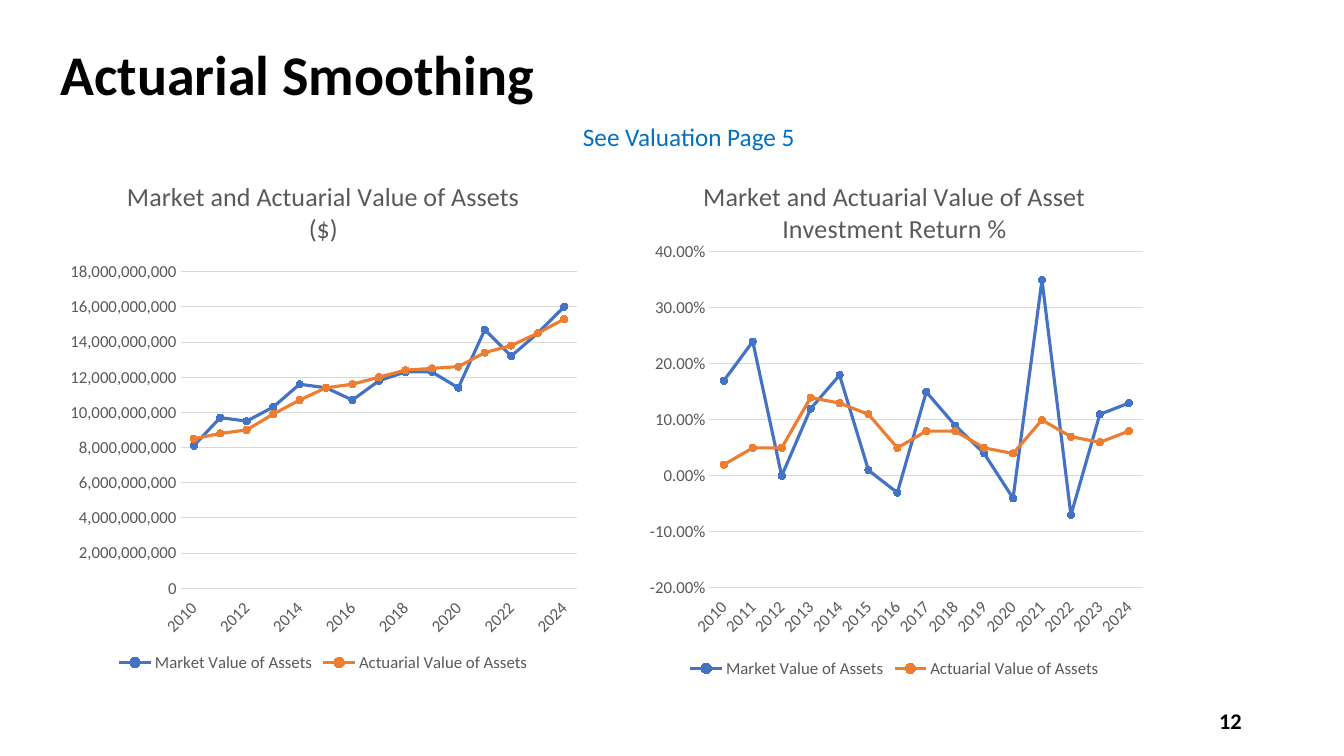
from lxml.etree import SubElement
from pptx import Presentation
from pptx.chart.data import CategoryChartData
from pptx.dml.color import RGBColor
from pptx.enum.chart import (XL_CHART_TYPE, XL_LEGEND_POSITION, XL_MARKER_STYLE,
                             XL_TICK_LABEL_POSITION, XL_TICK_MARK)
from pptx.enum.text import MSO_ANCHOR, PP_ALIGN
from pptx.oxml.ns import qn
from pptx.util import Inches, Pt

COLS, ROWS = 160, 90
WIDTH, HEIGHT = Inches(13.333), Inches(7.5)
FONT = "Calibri"
COLORS = {"black": "000000", "note": "0070C0", "label": "595959", "grid": "D9D9D9",
          "market": "4472C4", "actuarial": "ED7D31"}
YEARS = [str(year) for year in range(2010, 2025)]
BILLION = 10 ** 9
MARKET_VALUES = [8.1, 9.7, 9.5, 10.3, 11.6, 11.4, 10.7, 11.8, 12.3, 12.3, 11.4, 14.7, 13.2, 14.5, 16]
ACTUARIAL_VALUES = [8.5, 8.8, 9, 9.9, 10.7, 11.4, 11.6, 12, 12.4, 12.5, 12.6, 13.4, 13.8, 14.5, 15.3]
MARKET_RETURNS = [0.17, 0.24, 0, 0.12, 0.18, 0.01, -0.03, 0.15, 0.09, 0.04, -0.04, 0.35, -0.07, 0.11, 0.13]
ACTUARIAL_RETURNS = [0.02, 0.05, 0.05, 0.14, 0.13, 0.11, 0.05, 0.08, 0.08, 0.05, 0.04, 0.1, 0.07, 0.06, 0.08]


def rgb(name):
    """Return the named colour."""
    return RGBColor.from_string(COLORS[name])


def cells(col, row, cols, rows):
    """Turn grid units into left, top, width and height."""
    return (int(WIDTH * col / COLS), int(HEIGHT * row / ROWS),
            int(WIDTH * cols / COLS), int(HEIGHT * rows / ROWS))


def style_font(font, size, color, bold=False):
    """Set the typeface, size, colour and weight of a font."""
    font.name, font.size, font.bold = FONT, Pt(size), bold
    font.color.rgb = rgb(color)


def add_text(slide, box, text, size, color="black", bold=False,
             align=PP_ALIGN.LEFT, anchor=MSO_ANCHOR.MIDDLE, indent=0):
    """Add a one-line text box."""
    tf = slide.shapes.add_textbox(*cells(*box)).text_frame
    tf.word_wrap = True
    tf.vertical_anchor = anchor
    tf.margin_left += Inches(indent)
    p = tf.paragraphs[0]
    p.alignment = align
    r = p.add_run()
    r.text = text
    style_font(r.font, size, color, bold)


def set_plot_area(chart, x, y, w, h):
    """Fix the inner plot area as shares of the chart's size."""
    plot_area = chart.plots[0]._element.getparent()
    for old in plot_area.findall(qn("c:layout")):
        plot_area.remove(old)
    layout = SubElement(plot_area, qn("c:layout"))
    plot_area.insert(0, layout)
    manual = SubElement(layout, qn("c:manualLayout"))
    settings = {"layoutTarget": "inner", "xMode": "edge", "yMode": "edge",
                "x": x, "y": y, "w": w, "h": h}
    for tag, value in settings.items():
        SubElement(manual, qn(f"c:{tag}")).set("val", str(value))


def style_axes(chart, low, high, step, number_format):
    """Style the year axis and the scaled value axis."""
    years, values = chart.category_axis, chart.value_axis
    for axis in (years, values):
        axis.major_tick_mark = axis.minor_tick_mark = XL_TICK_MARK.NONE
        style_font(axis.tick_labels.font, 12, "label")
    years.tick_label_position = XL_TICK_LABEL_POSITION.LOW
    years.format.line.color.rgb = rgb("grid")
    years.format.line.width = Pt(0.75)
    years._element.find(qn("c:txPr")).find(qn("a:bodyPr")).set("rot", "-2700000")
    values.minimum_scale, values.maximum_scale, values.major_unit = low, high, step
    values.tick_labels.number_format = number_format
    values.tick_labels.number_format_is_linked = False
    values.format.line.fill.background()
    values.major_gridlines.format.line.color.rgb = rgb("grid")
    values.major_gridlines.format.line.width = Pt(0.75)


def add_line_chart(slide, box, title, market, actuarial, scale, number_format, plot):
    """Add a line chart comparing market and actuarial figures."""
    data = CategoryChartData(number_format=number_format)
    data.categories = YEARS
    data.add_series("Market Value of Assets", market)
    data.add_series("Actuarial Value of Assets", actuarial)
    chart = slide.shapes.add_chart(XL_CHART_TYPE.LINE_MARKERS, *cells(*box), data).chart
    style_font(chart.font, 10, "black")
    r = chart.chart_title.text_frame.paragraphs[0].add_run()
    r.text = title
    style_font(r.font, 18.6, "label")
    chart.chart_title.include_in_layout = False
    chart.has_legend = True
    chart.legend.position = XL_LEGEND_POSITION.BOTTOM
    chart.legend.include_in_layout = False
    style_font(chart.legend.font, 12, "label")
    chart.plots[0].vary_by_categories = False
    for series, color in zip(chart.plots[0].series, ("market", "actuarial")):
        series.smooth = False
        series.format.line.color.rgb = rgb(color)
        series.format.line.width = Pt(2.25)
        series.marker.style, series.marker.size = XL_MARKER_STYLE.CIRCLE, 5
        series.marker.format.fill.solid()
        series.marker.format.fill.fore_color.rgb = rgb(color)
        series.marker.format.line.color.rgb = rgb(color)
    style_axes(chart, *scale, number_format)
    set_plot_area(chart, *plot)


def main():
    """Build the actuarial smoothing slide."""
    prs = Presentation()
    prs.slide_width, prs.slide_height = WIDTH, HEIGHT
    s = prs.slides.add_slide(prs.slide_layouts[6])
    add_text(s, (0, 0, COLS, 17.4), "Actuarial Smoothing", 40, bold=True, indent=0.5)
    add_text(s, (113, 83.4, 36, 4.8), "12", 16, bold=True, align=PP_ALIGN.RIGHT)
    add_text(s, (65, 13.8, 34, 4.8), "See Valuation Page 5", 18, "note",
             align=PP_ALIGN.CENTER, anchor=MSO_ANCHOR.TOP)
    add_line_chart(s, (7, 18.75, 63, 61.8), "Market and Actuarial Value of Assets ($)",
                   [round(v * BILLION) for v in MARKET_VALUES],
                   [round(v * BILLION) for v in ACTUARIAL_VALUES],
                   (0, 18 * BILLION, 2 * BILLION), "#,##0", (0.23, 0.22, 0.75, 0.61))
    add_line_chart(s, (75, 18.75, 63, 62.5),
                   "Market and Actuarial Value of Asset Investment Return %",
                   MARKET_RETURNS, ACTUARIAL_RETURNS,
                   (-0.2, 0.4, 0.1), "0.00%", (0.15, 0.18, 0.82, 0.64))
    prs.save("out.pptx")


if __name__ == "__main__":
    main()
